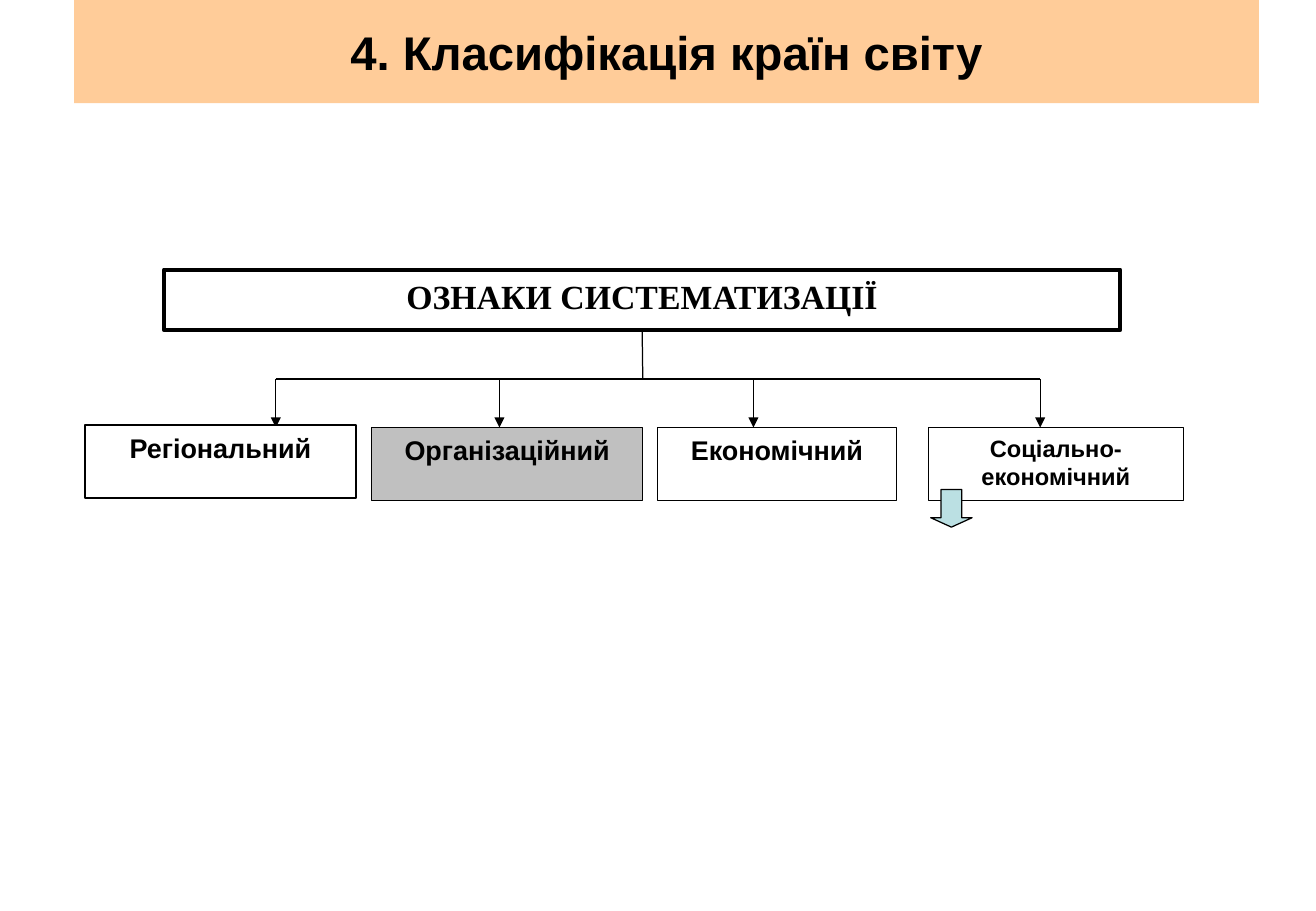
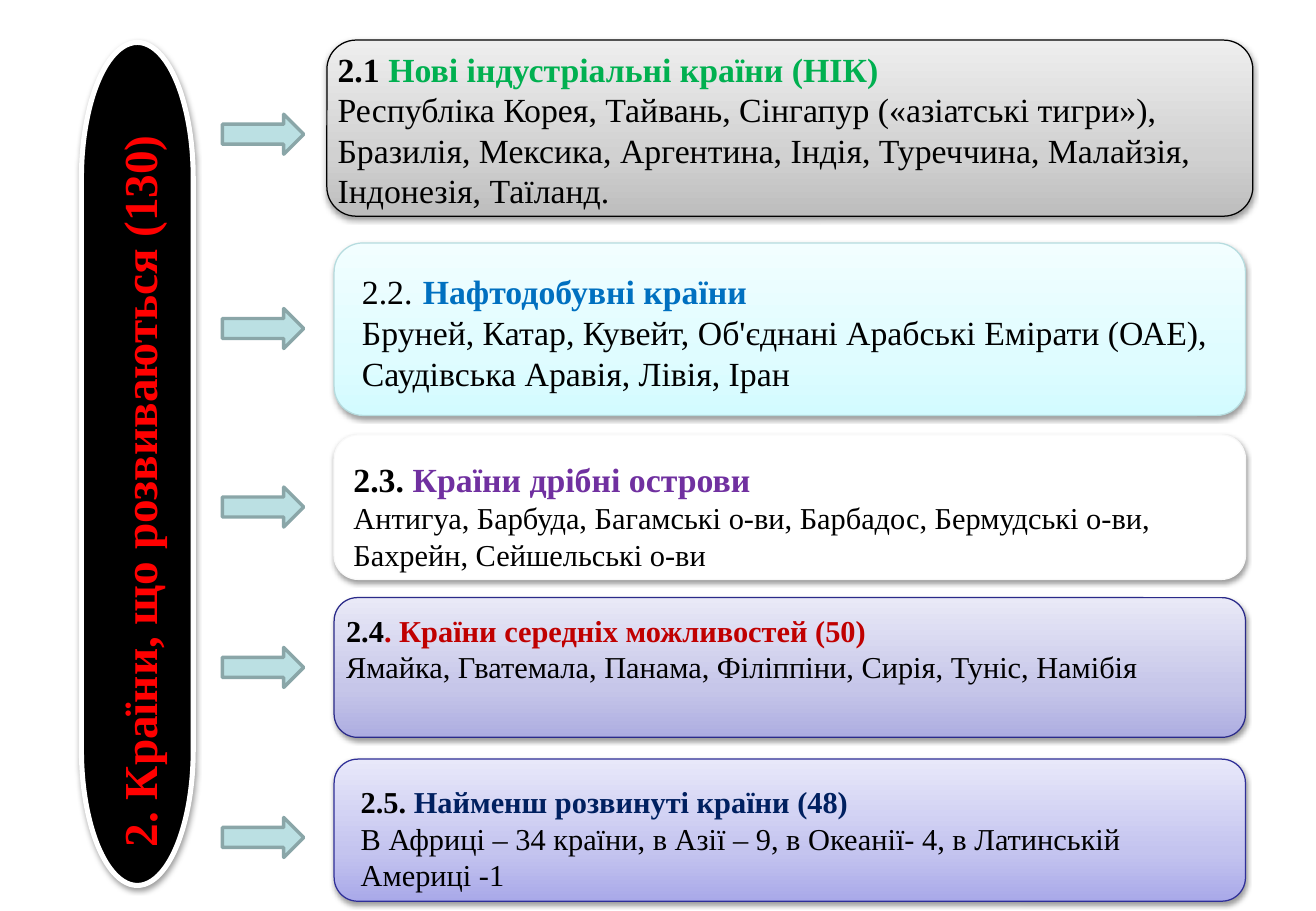
"""Builds two slides on the classification of the countries of the world."""
from lxml import etree
from pptx import Presentation
from pptx.dml.color import RGBColor
from pptx.enum.shapes import MSO_CONNECTOR, MSO_SHAPE
from pptx.enum.text import MSO_ANCHOR, MSO_AUTO_SIZE, PP_ALIGN
from pptx.oxml.ns import qn
from pptx.util import Emu, Pt

PX = 9144
RECT, ROUNDED = MSO_SHAPE.RECTANGLE, MSO_SHAPE.ROUNDED_RECTANGLE
PILL = MSO_SHAPE.FLOWCHART_TERMINATOR
RIGHT, DOWN = MSO_SHAPE.RIGHT_ARROW, MSO_SHAPE.DOWN_ARROW
STRAIGHT = MSO_CONNECTOR.STRAIGHT
TOP, MIDDLE = MSO_ANCHOR.TOP, MSO_ANCHOR.MIDDLE
LEFT, CENTER = PP_ALIGN.LEFT, PP_ALIGN.CENTER
GROW = MSO_AUTO_SIZE.SHAPE_TO_FIT_TEXT
SANS, SERIF = "Arial", "Times New Roman"
COLORS = {
    "black": "000000", "white": "FFFFFF", "band": "FFCC99", "gray": "C0C0C0",
    "arrow": "BBE0E3", "arrow_edge": "8AA6A8", "red": "FF0000",
    "green": "00B050", "blue": "0070C0", "purple": "7030A0",
    "crimson": "C00000", "navy": "002060", "cyan_edge": "B6DCDF",
    "pale_edge": "F9F9F9", "violet_edge": "2A2A89", "indigo_edge": "2F2F98",
}
GRADIENTS = {
    "silver": ("BDBDBD", "D1D1D1", "EEEEEE"),
    "cyan": ("D3FBFF", "DFFCFF", "F2FEFF"),
    "violet": ("ADADE1", "C6C6E9", "E9E9F7"),
    "indigo": ("A9A9E9", "C4C4EF", "E8E8FA"),
}


def add_block(slide, preset, box, fill, edge=None, width=0.75, raised=False):
    """Add a preset shape with a plain or gradient fill and an optional soft shadow."""
    block = slide.shapes.add_shape(preset, *(Emu(n * PX) for n in box))
    block.shadow.inherit = False
    if fill in GRADIENTS:
        block.fill.gradient()
        block.fill.gradient_angle = 90
        stops = block.element.spPr.find(".//" + qn("a:gsLst"))
        for stop in list(stops):
            stops.remove(stop)
        for position, color in zip((0, 35000, 100000), GRADIENTS[fill]):
            stop = etree.SubElement(stops, qn("a:gs"), pos=str(position))
            etree.SubElement(stop, qn("a:srgbClr"), val=color)
    else:
        block.fill.solid()
        block.fill.fore_color.rgb = RGBColor.from_string(COLORS[fill])
    if edge:
        block.line.color.rgb = RGBColor.from_string(COLORS[edge])
        block.line.width = Pt(width)
    else:
        block.line.fill.background()
    if raised:
        effects = block.element.spPr.find(qn("a:effectLst"))
        shadow = etree.SubElement(effects, qn("a:outerShdw"), blurRad="40000",
                                  dist="20000", dir="5400000", rotWithShape="0")
        tint = etree.SubElement(shadow, qn("a:srgbClr"), val=COLORS["black"])
        etree.SubElement(tint, qn("a:alpha"), val="38000")
    return block


def write(frame, paragraphs, font, align=LEFT, anchor=TOP):
    """Fill a text frame with paragraphs of (text, size, color, bold) runs."""
    frame.word_wrap = True
    frame.vertical_anchor = anchor
    for index, parts in enumerate(paragraphs):
        paragraph = frame.add_paragraph() if index else frame.paragraphs[0]
        paragraph.alignment = align
        for text, size, color, bold in parts:
            run = paragraph.add_run()
            run.text = text
            run.font.name = font
            run.font.size = Pt(size)
            run.font.bold = bold
            run.font.color.rgb = RGBColor.from_string(COLORS[color])


deck = Presentation()
deck.slide_width, deck.slide_height = Emu(1083 * PX), Emu(750 * PX)
blank = deck.slide_layouts[6]

scheme = deck.slides.add_slide(blank)
title = add_block(scheme, RECT, (61, 0, 975, 85), "band")
write(title.text_frame, [[("4. Класифікація країн світу", 28, "black", True)]],
      SANS, CENTER, MIDDLE)
heading = add_block(scheme, RECT, (135, 222, 787, 50), "white", "black", 2.25)
write(heading.text_frame, [[("ОЗНАКИ СИСТЕМАТИЗАЦІЇ", 20, "black", True)]],
      SERIF, CENTER)

BUS, BRANCH_END = 312, 352
branches = (227, 411, 620, 856)
trunk = (529, 272, 529, BUS)
bus = (branches[0], BUS, branches[-1], BUS)
for ends in (trunk, bus, *((x, BUS, x, BRANCH_END) for x in branches)):
    link = scheme.shapes.add_connector(STRAIGHT, *(Emu(n * PX) for n in ends))
    link.line.color.rgb = RGBColor.from_string(COLORS["black"])
    link.line.width = Pt(0.75)
    if ends == trunk:
        link.begin_connect(heading, 2)
    if ends[3] == BRANCH_END:
        etree.SubElement(link.line._get_or_add_ln(), qn("a:tailEnd"), type="triangle")
    etree.SubElement(link.element.spPr, qn("a:effectLst"))

criteria = (
    ("Регіональний", 70, 350, 223, "white", 16),
    ("Організаційний", 306, 352, 223, "gray", 16),
    ("Економічний", 541, 352, 197, "white", 16),
    ("Соціально-економічний", 764, 352, 210, "white", 14),
)
for name, left, top, width, fill, size in criteria:
    criterion = add_block(scheme, RECT, (left, top, width, 60), fill, "black")
    write(criterion.text_frame, [[(name, size, "black", True)]], SANS, CENTER)
pointer = add_block(scheme, DOWN, (766, 403, 34, 31), "arrow", "black")
pointer.adjustments[1] = 0.25

developing = deck.slides.add_slide(blank)
pillar = add_block(developing, PILL, (-234, 336, 694, 92), "black", "white", 3, True)
pillar.rotation = 90
pillar_label = developing.shapes.add_textbox(
    *(Emu(n * PX) for n in (-282, 376, 792, 57)))
pillar_label.rotation = 270
write(pillar_label.text_frame,
      [[("2. Країни, що розвиваються (130)", 28, "red", True)]], SERIF, CENTER)
pillar_label.text_frame.auto_size = GROW

groups = (
    ((269, 33, 762, 145), "silver", "black", 94, (268, 35, 757, 145),
     [("2.1", 20, "black", True),
      (" Нові індустріальні країни (НІК)", 20, "green", True)],
     ("Республіка Корея, Тайвань, Сінгапур («азіатські тигри»), Бразилія, Мексика, "
      "Аргентина, Індія, Туреччина, Малайзія, Індонезія, Таїланд."), 20),
    ((275, 200, 750, 142), "cyan", "cyan_edge", 254, (288, 212, 731, 118),
     [("2.2.", 20, "black", False), (" ", 24, "black", False),
      ("Нафтодобувні країни", 20, "blue", True)],
     ("Бруней, Катар, Кувейт, Об'єднані Арабські Емірати (ОАЕ), "
      "Саудівська Аравія, Лівія, Іран"), 20),
    ((275, 358, 750, 119), "white", "pale_edge", 401, (281, 373, 738, 104),
     [("2.3. ", 20, "black", True), ("Країни дрібні острови", 20, "purple", True)],
     ("Антигуа, Барбуда, Багамські о-ви, Барбадос, Бермудські о-ви, "
      "Бахрейн, Сейшельські о-ви"), 18),
    ((275, 492, 750, 115), "violet", "violet_edge", 533, (275, 499, 704, 71),
     [("2.4", 18, "black", True),
      (". Країни середніх можливостей (50)", 18, "crimson", True)],
     "Ямайка, Гватемала, Панама, Філіппіни, Сирія, Туніс, Намібія", 18),
    ((275, 625, 750, 117), "indigo", "indigo_edge", 673, (287, 640, 738, 101),
     [("2.5. ", 18, "black", True),
      ("Найменш розвинуті країни (48)", 18, "navy", True)],
     "В Африці – 34 країни, в Азії – 9, в Океанії- 4, в Латинській Америці -1", 18),
)
for panel, fill, edge, arrow_top, text_box, caption, countries, size in groups:
    add_block(developing, ROUNDED, panel, fill, edge, raised=True)
    add_block(developing, RIGHT, (183, arrow_top, 67, 33), "arrow", "arrow_edge", 2)
    details = developing.shapes.add_textbox(*(Emu(n * PX) for n in text_box))
    write(details.text_frame, [caption, [(countries, size, "black", False)]], SERIF)
    details.text_frame.auto_size = GROW

deck.save("out.pptx")
